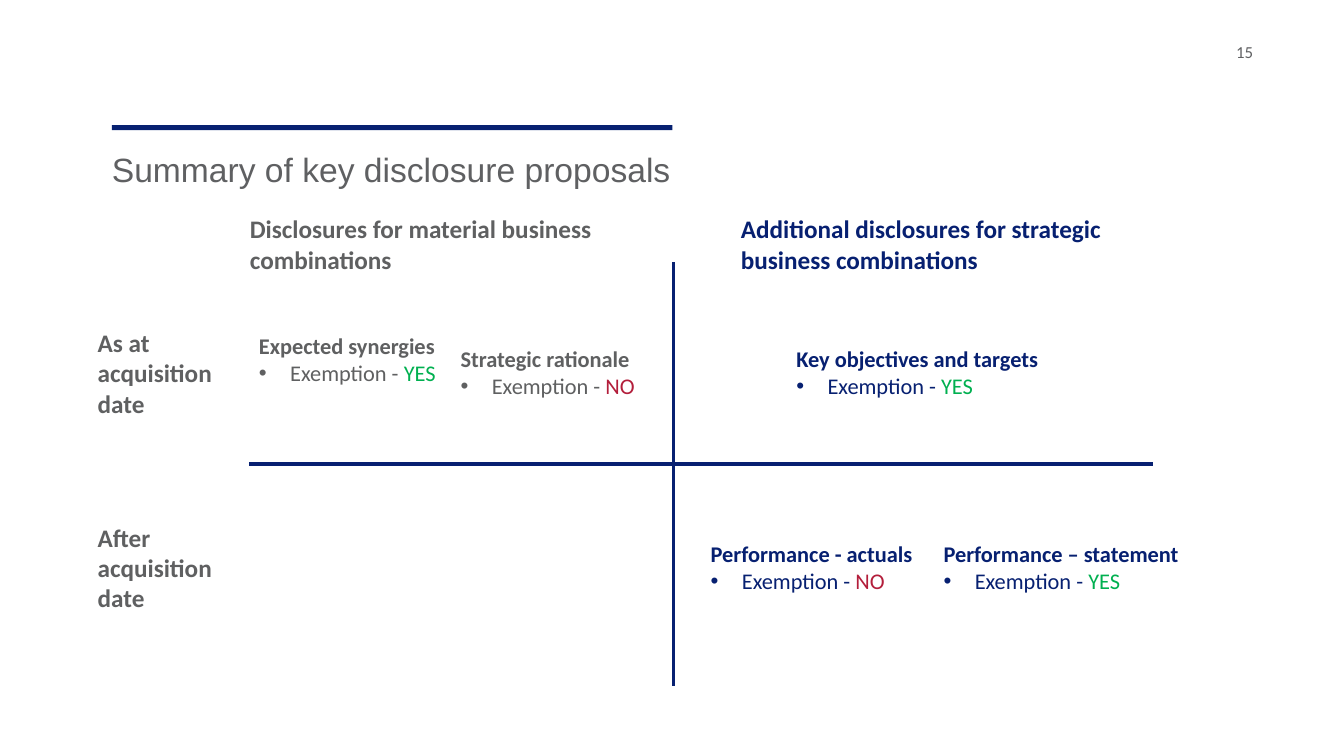
from lxml import etree
from pptx import Presentation
from pptx.dml.color import RGBColor
from pptx.enum.shapes import MSO_CONNECTOR as CONN, MSO_SHAPE as SHAPE
from pptx.enum.text import MSO_ANCHOR as ANCHOR, PP_ALIGN as ALIGN
from pptx.oxml.ns import qn
from pptx.util import Inches, Pt

NAVY, GREY = "072071", "5F6061"
ANSWERS = {"YES": "00B050", "NO": "B31E3B"}


def rgb(value):
    return RGBColor.from_string(value)


def add_run(p, text, size, color, bold=False, font="Calibri"):
    r = p.add_run()
    r.text = text
    r.font.name, r.font.size, r.font.bold = font, Pt(size), bold
    r.font.color.rgb = rgb(color)


def add_box(s, x, y, w, h):
    tf = s.shapes.add_textbox(Inches(x), Inches(y), Inches(w), Inches(h)).text_frame
    tf.word_wrap = True
    return tf


def add_bullet(p, indent=0.31):
    pPr = p._p.get_or_add_pPr()
    pPr.set("marL", str(Inches(indent)))
    pPr.set("indent", str(-Inches(indent)))
    etree.SubElement(pPr, qn("a:buFont")).set("typeface", "Arial")
    etree.SubElement(pPr, qn("a:buChar")).set("char", "•")


def add_line(s, x1, y1, x2, y2):
    line = s.shapes.add_connector(CONN.STRAIGHT, Inches(x1), Inches(y1), Inches(x2), Inches(y2))
    line.line.color.rgb = rgb(NAVY)
    line.line.width = Pt(2.84)
    etree.SubElement(line._element.spPr, qn("a:effectLst"))


def add_header(s, x, y, w, h):
    # Accent bar above the title
    bar = s.shapes.add_shape(SHAPE.RECTANGLE, Inches(x + 0.1), Inches(y - 0.19),
                             Inches(w / 2), Inches(0.05))
    bar.shadow.inherit = False
    bar.fill.solid()
    bar.fill.fore_color.rgb = rgb("072171")
    bar.line.fill.background()

    # Title
    title = s.shapes.title
    title.left, title.top, title.width, title.height = map(Inches, (x, y, w, h))
    tf = title.text_frame
    tf.vertical_anchor = ANCHOR.TOP
    p = tf.paragraphs[0]
    p.alignment = ALIGN.LEFT
    add_run(p, "Summary of key disclosure proposals", 24, "5F6062", font="Arial")


def add_page_number(s, x, y, w, h):
    tf = add_box(s, x, y, w, h)
    tf.margin_left = tf.margin_right = tf.margin_top = tf.margin_bottom = 0
    add_run(tf.paragraphs[0], "15", 12, "5F6062")


def add_heading(s, x, y, w, h, text, color):
    add_run(add_box(s, x, y, w, h).paragraphs[0], text, 18, color, bold=True)


def add_disclosure(s, x, y, w, h, name, answer, color):
    tf = add_box(s, x, y, w, h)
    add_run(tf.paragraphs[0], name, 16, color, bold=True)
    p = tf.add_paragraph()
    add_bullet(p)
    add_run(p, "Exemption - ", 16, color)
    add_run(p, answer, 16, ANSWERS[answer])


def add_matrix(s, x, y, w, h):
    # Axes
    mid_x, mid_y = x + 4.3, y + 2.53
    add_line(s, x + 0.09, mid_y, x + w, mid_y)
    add_line(s, mid_x, y + 0.53, mid_x, y + h)

    # Column headings
    add_heading(s, x, y, 4.3, 0.71, "Disclosures for material business combinations", GREY)
    add_heading(s, mid_x + 0.57, y, 4.36, 0.71,
                "Additional disclosures for strategic business combinations", NAVY)

    # Row headings
    for when, dy in (("As at", 1.13), ("After", 3.06)):
        add_heading(s, x - 1.51, y + dy, 1.42, 1.01, f"{when} acquisition date", GREY)

    # Disclosures, offset from the crossing of the axes
    for dx, dy, width, height, name, answer, color in (
        (-4.21, -1.35, 1.95, 0.91, "Expected synergies", "YES", GREY),
        (-2.21, -1.22, 1.95, 0.64, "Strategic rationale", "NO", GREY),
        (1.12, -1.22, 2.8, 0.64, "Key objectives and targets", "YES", NAVY),
        (0.27, 0.71, 2.21, 0.64, "Performance - actuals", "NO", NAVY),
        (2.58, 0.71, 2.7, 0.64, "Performance – statement", "YES", NAVY),
    ):
        add_disclosure(s, mid_x + dx, mid_y + dy, width, height, name, answer, color)


def main():
    prs = Presentation()
    prs.slide_width, prs.slide_height = Inches(13.33), Inches(7.5)
    s = prs.slides.add_slide(prs.slide_layouts[5])
    add_header(s, 1.01, 1.43, 11.12, 0.84)
    add_page_number(s, 12.26, 0.41, 0.67, 0.29)
    add_matrix(s, 2.38, 2.07, 9.06, 4.74)
    prs.save("out.pptx")


if __name__ == "__main__":
    main()
